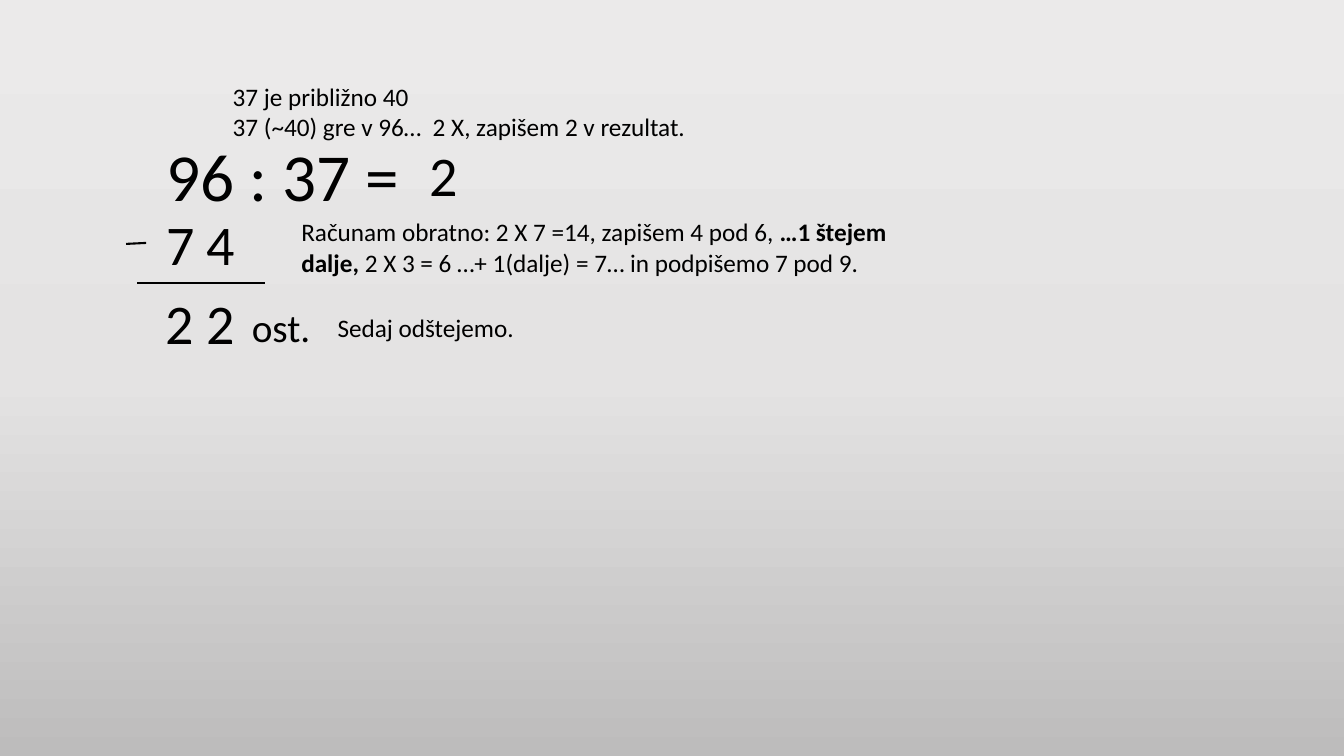
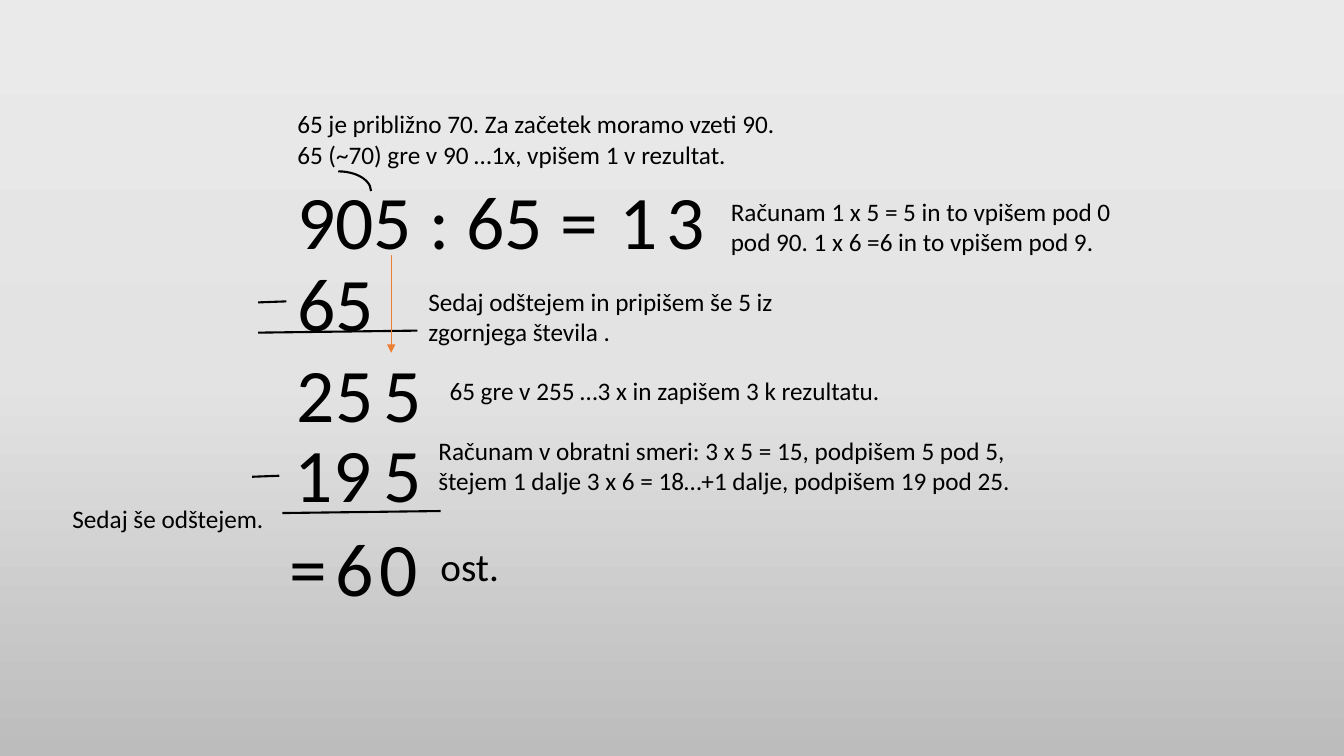
from copy import deepcopy

from lxml.etree import SubElement
from pptx import Presentation
from pptx.dml.color import RGBColor
from pptx.enum.shapes import MSO_CONNECTOR as CONN, MSO_SHAPE as SHAPE
from pptx.enum.text import MSO_AUTO_SIZE as AUTO
from pptx.oxml.ns import qn
from pptx.util import Inches, Pt

COLORS = {"ink": "000000", "arrow": "ED7D31",
          "top": "EBEAEA", "middle": "E4E3E3", "bottom": "BDBCBC"}
FONT = "Calibri"
NOTE, REMAINDER = 18, 28


def rgb(name):
    """Return the named colour."""
    return RGBColor.from_string(COLORS[name])


def set_background(master):
    """Give the master a vertical gradient of three stops."""
    fill = master.background.fill
    fill.gradient()
    fill.gradient_angle = 270
    stops = master.element.find(".//" + qn("a:gsLst"))
    stops.append(deepcopy(stops[-1]))
    names = ("top", "middle", "bottom")
    for stop, name, position in zip(fill.gradient_stops, names, (0, 0.5, 1)):
        stop.color.rgb = rgb(name)
        stop.position = position


def add_text(s, x, y, w, size, paragraphs):
    """Add a text box; each paragraph is a list of (text, bold) runs."""
    h = len(paragraphs) * size * 1.22 / 72 + 0.1
    tf = s.shapes.add_textbox(Inches(x), Inches(y), Inches(w), Inches(h)).text_frame
    tf.word_wrap = True
    tf.auto_size = AUTO.SHAPE_TO_FIT_TEXT
    for i, runs in enumerate(paragraphs):
        p = tf.paragraphs[0] if i == 0 else tf.add_paragraph()
        for text, bold in runs:
            r = p.add_run()
            r.text = text
            r.font.name = FONT
            r.font.size = Pt(size)
            r.font.bold = bold
            r.font.color.rgb = rgb("ink")


def add_line(s, x1, y1, x2, y2, color="ink", width=1.5, arrow=False):
    """Add a straight line, with an arrowhead at its end if asked."""
    line = s.shapes.add_connector(CONN.STRAIGHT, *map(Inches, (x1, y1, x2, y2)))
    line.line.color.rgb = rgb(color)
    line.line.width = Pt(width)
    if arrow:
        SubElement(line.line._get_or_add_ln(), qn("a:tailEnd"), type="triangle")
    SubElement(line._element.spPr, qn("a:effectLst"))


def add_arc(s, x, y, w, h):
    """Add the arc that joins the first two digits."""
    sp = s.shapes.add_shape(SHAPE.ARC, *map(Inches, (x, y, w, h)))
    sp.shadow.inherit = False
    sp.fill.background()
    sp.line.color.rgb = rgb("ink")
    sp.line.width = Pt(1.5)


def add_digits(s, box, rows, size, cell):
    """Place every digit of each row in its own column."""
    left, top = box
    for y, digits, columns in rows:
        for x, digit in zip(columns, digits):
            add_text(s, left + x, top + y, cell, size, [[(digit, False)]])


def add_labels(s, box, labels, size):
    """Place labels of one text size inside the box."""
    left, top = box
    for x, y, w, *paragraphs in labels:
        runs = [[(p, False)] if isinstance(p, str) else p for p in paragraphs]
        add_text(s, left + x, top + y, w, size, runs)


def add_lines(s, box, lines, **style):
    """Place lines inside the box."""
    left, top = box
    for x1, y1, x2, y2 in lines:
        add_line(s, left + x1, top + y1, left + x2, top + y2, **style)


def two_digit_slide(s, box):
    """Build the division of a two-digit number."""
    add_labels(s, box, [(0.3, 0.53, 2.67, "96 : 37 =")], 48)
    add_digits(s, box, [
        (0.6, "2", [2.91]),
        (1.28, "74", [0.3, 0.7]),
        (2.06, "22", [0.29, 0.7]),
    ], 40, 0.5)
    add_lines(s, box, [(0.11, 2.06, 1.38, 2.06), (0, 1.67, 0.2, 1.66)])
    add_labels(s, box, [(1.15, 2.21, 0.9, "ost.")], REMAINDER)
    add_labels(s, box, [
        (0.96, 0.01, 5.55, "37 je približno 40",
         "37 (~40) gre v 96…  2 X, zapišem 2 v rezultat."),
        (1.64, 1.35, 6.21, [
            ("Računam obratno: 2 X 7 =14, zapišem 4 pod 6, ", False),
            ("…1 štejem dalje, ", True),
            ("2 X 3 = 6 …+ 1(dalje) = 7… in podpišemo 7 pod 9.", False)]),
        (2, 2.3, 1.96, "Sedaj odštejemo."),
    ], NOTE)


def three_digit_slide(s, box):
    """Build the division of a three-digit number."""
    left, top = box
    add_labels(s, box, [(2.25, 0.68, 3.2, "905 : 65 =")], 54)
    add_digits(s, box, [
        (0.68, "13", [5.45, 5.91]),
        (1.49, "65", [2.25, 2.63]),
        (2.39, "255", [2.24, 2.63, 3.11]),
        (3.19, "195", [2.22, 2.61, 3.11]),
        (4.12, "=60", [2.17, 2.63, 3.07]),
    ], 54, 0.64)
    add_lines(s, box, [
        (1.96, 2.3, 3.54, 2.28), (1.96, 2, 2.24, 1.99),
        (2.2, 4.09, 3.77, 4.07), (1.9, 3.73, 2.17, 3.72),
    ])
    add_lines(s, box, [(3.28, 1.53, 3.28, 2.5)], color="arrow", width=1, arrow=True)
    add_arc(s, left + 2.43, top + 0.7, 0.65, 0.39)
    add_labels(s, box, [(3.67, 4.33, 0.9, "ost.")], REMAINDER)
    add_labels(s, box, [
        (2.25, 0.03, 5.25, "65 je približno 70. Za začetek moramo vzeti 90.",
         "65 (~70) gre v 90 …1x, vpišem 1 v rezultat."),
        (6.55, 0.9, 4.03, "Računam 1 x 5 = 5 in to vpišem pod 0 pod 90. "
         "1 x 6 =6 in to vpišem pod 9."),
        (3.55, 1.79, 3.65, "Sedaj odštejem in pripišem še 5 iz zgornjega števila ."),
        (3.76, 2.67, 4.79, "65 gre v 255 …3 x in zapišem 3 k rezultatu."),
        (3.65, 3.27, 5.92, "Računam v obratni smeri: 3 x 5 = 15, podpišem 5 pod 5, "
         "štejem 1 dalje 3 x 6 = 18…+1 dalje, podpišem 19 pod 25."),
        (0.02, 3.94, 4.03, "Sedaj še odštejem."),
    ], NOTE)


def main():
    """Build and save the presentation."""
    prs = Presentation()
    prs.slide_width, prs.slide_height = Inches(13.33), Inches(7.5)
    set_background(prs.slide_master)
    blank = prs.slide_layouts[6]
    two_digit_slide(prs.slides.add_slide(blank), (1.25, 0.75))
    three_digit_slide(prs.slides.add_slide(blank), (0.6, 1))
    prs.save("out.pptx")


if __name__ == "__main__":
    main()
